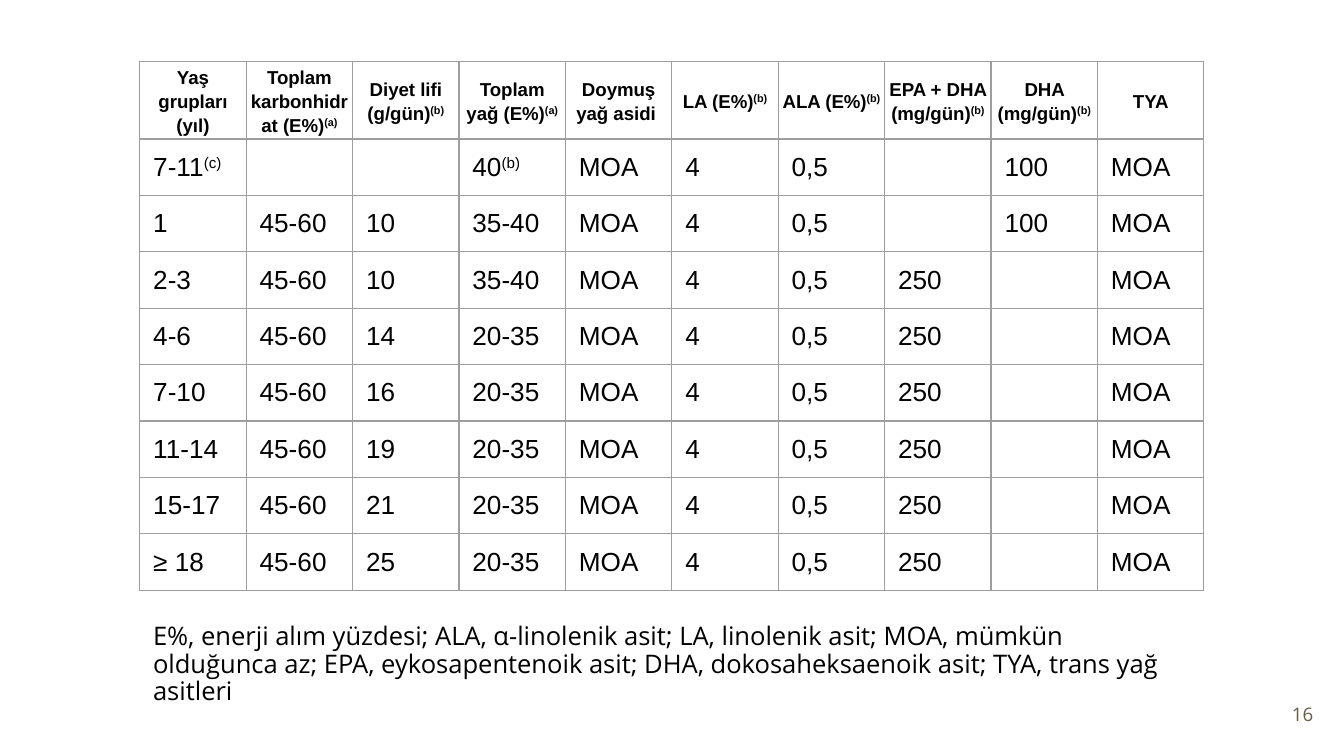
from dataclasses import dataclass

from lxml.etree import SubElement
from pptx import Presentation
from pptx.dml.color import RGBColor
from pptx.enum.text import MSO_ANCHOR, MSO_AUTO_SIZE, PP_ALIGN
from pptx.oxml import parse_xml
from pptx.oxml.ns import nsdecls, qn
from pptx.util import Inches, Pt


@dataclass(frozen=True)
class Theme:
    """Colours, fonts and type sizes of the deck."""
    ink: str = "000000"
    muted: str = "695D46"
    rule: str = "9E9E9E"
    rule_width: float = 0.75
    table_font: str = "Arial"
    text_font: str = "Open Sans"
    header_size: int = 10
    body_size: int = 14
    note_size: float = 13.7
    number_size: int = 10


THEME = Theme()
HEADERS = [
    "Yaş grupları (yıl)", "Toplam karbonhidrat (E%)^(a)", "Diyet lifi (g/gün)^(b)",
    "Toplam yağ (E%)^(a)", "Doymuş yağ asidi ", "LA (E%)^(b)", "ALA (E%)^(b)",
    "EPA + DHA (mg/gün)^(b)", "DHA (mg/gün)^(b)", "TYA",
]
AGE_GROUPS = [
    ("7-11^(c)", "", "", "40^(b)", "", "100"),
    ("1", "45-60", "10", "35-40", "", "100"),
    ("2-3", "45-60", "10", "35-40", "250", ""),
    ("4-6", "45-60", "14", "20-35", "250", ""),
    ("7-10", "45-60", "16", "20-35", "250", ""),
    ("11-14", "45-60", "19", "20-35", "250", ""),
    ("15-17", "45-60", "21", "20-35", "250", ""),
    ("≥ 18", "45-60", "25", "20-35", "250", ""),
]
ABBREVIATIONS = (
    "E%, enerji alım yüzdesi; ALA, α-linolenik asit; LA, linolenik asit; "
    "MOA, mümkün olduğunca az; EPA, eykosapentenoik asit; "
    "DHA, dokosaheksaenoik asit; TYA, trans yağ asitleri"
)


def write_text(frame, text, *, size, font, color=THEME.ink, bold=False,
               align=PP_ALIGN.LEFT, spacing=None):
    """Write one paragraph, raising what follows a caret as superscript."""
    para = frame.paragraphs[0]
    para.alignment = align
    para.line_spacing = spacing
    for index, part in enumerate(text.split("^") if text else []):
        span = para.add_run()
        span.text = part
        span.font.size = Pt(size)
        span.font.name = font
        span.font.bold = bold
        span.font.color.rgb = RGBColor.from_string(color)
        if index:
            span.font._element.set("baseline", "30000")
    if not text:
        ending = SubElement(para._p, qn("a:endParaRPr"), sz=str(size * 100))
        SubElement(ending, qn("a:latin"), typeface=font)


def style_cell(cell, horizontal, vertical, anchor):
    """Set margins, anchor, empty fill and the four borders of a cell."""
    cell.margin_left = cell.margin_right = Inches(horizontal)
    cell.margin_top = cell.margin_bottom = Inches(vertical)
    cell.vertical_anchor = anchor
    cell.fill.background()
    properties = cell._tc.get_or_add_tcPr()
    for index, side in enumerate(("lnL", "lnR", "lnT", "lnB")):
        properties.insert(index, parse_xml(
            f'<a:{side} {nsdecls("a")} w="{Pt(THEME.rule_width)}"><a:solidFill>'
            f'<a:srgbClr val="{THEME.rule}"/></a:solidFill></a:{side}>'))


def add_intake_table(page, left, top, width, header_height, row_height):
    """Place the table of recommended intakes by age group."""
    rows = [HEADERS] + [
        (age, carbohydrate, fibre, fat, "MOA", "4", "0,5", epa_dha, dha, "MOA")
        for age, carbohydrate, fibre, fat, epa_dha, dha in AGE_GROUPS
    ]
    height = header_height + row_height * len(AGE_GROUPS)
    table = page.shapes.add_table(
        len(rows), len(HEADERS), Inches(left), Inches(top),
        Inches(width), Inches(height)).table
    table.first_row = table.horz_banding = False
    for column in table.columns:
        column.width = Inches(width / len(HEADERS))
    for index, values in enumerate(rows):
        header = index == 0
        table.rows[index].height = Inches(header_height if header else row_height)
        for cell, value in zip(table.rows[index].cells, values):
            if header:
                style_cell(cell, 0.03, 0.02, MSO_ANCHOR.MIDDLE)
                write_text(cell.text_frame, value, size=THEME.header_size,
                           font=THEME.table_font, bold=True,
                           align=PP_ALIGN.CENTER, spacing=1.15)
            else:
                style_cell(cell, 0.1, 0.1, MSO_ANCHOR.TOP)
                write_text(cell.text_frame, value, size=THEME.body_size,
                           font=THEME.table_font)


def add_text_box(page, left, top, width, height, text, anchor=MSO_ANCHOR.TOP,
                 **text_format):
    """Place a wrapping text box with even insets."""
    box = page.shapes.add_textbox(
        Inches(left), Inches(top), Inches(width), Inches(height))
    frame = box.text_frame
    frame.word_wrap = True
    frame.auto_size = MSO_AUTO_SIZE.NONE
    frame.vertical_anchor = anchor
    frame.margin_left = frame.margin_right = Inches(0.1)
    frame.margin_top = frame.margin_bottom = Inches(0.1)
    write_text(frame, text, **text_format)


def build_intake_slide(deck):
    """Add the slide with the intake table, abbreviations and page number."""
    page = deck.slides.add_slide(deck.slide_layouts[6])
    add_text_box(page, 9.27, 5.1, 0.6, 0.43, "16", anchor=MSO_ANCHOR.MIDDLE,
                 size=THEME.number_size, font=THEME.text_font,
                 color=THEME.muted, align=PP_ALIGN.RIGHT)
    add_intake_table(page, 1.04, 0.46, 7.92, 0.57, 0.42)
    add_text_box(page, 1.04, 4.54, 7.92, 0.83, ABBREVIATIONS, spacing=0.9,
                 size=THEME.note_size, font=THEME.text_font)


def main():
    """Build and save the deck."""
    deck = Presentation()
    deck.slide_width = Inches(10)
    deck.slide_height = deck.slide_width * 9 // 16
    build_intake_slide(deck)
    deck.save("out.pptx")


if __name__ == "__main__":
    main()
